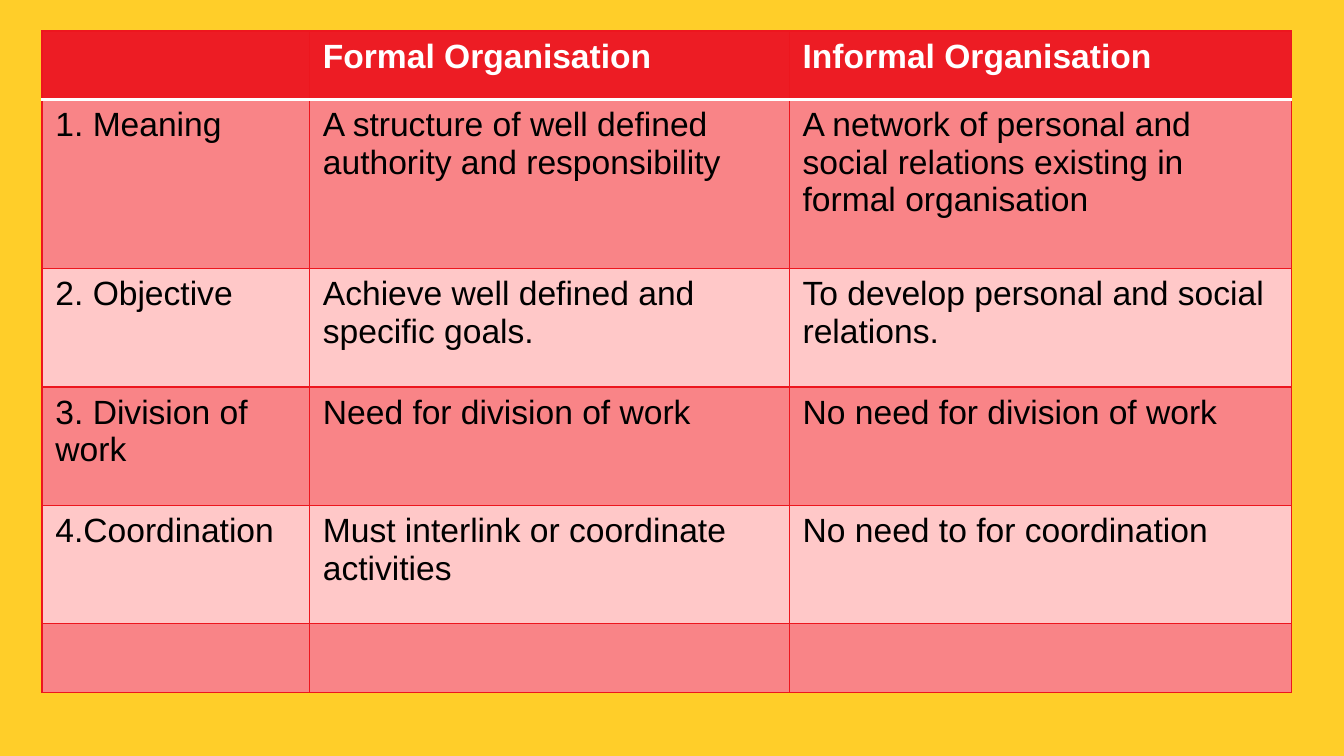
from dataclasses import dataclass

from lxml import etree
from pptx import Presentation
from pptx.dml.color import RGBColor
from pptx.oxml import ns
from pptx.util import Pt


@dataclass(frozen=True)
class Theme:
    back: str = "FFCE29"
    head: str = "ED1C24"
    dark: str = "F98487"
    light: str = "FFC8C8"
    rule: str = "ED161E"
    white: str = "FFFFFF"
    black: str = "000000"
    font: str = "Arial"
    size: float = 18
    thin: float = 0.75
    thick: float = 2


@dataclass(frozen=True)
class Row:
    high: float
    texts: tuple[str, str, str]


THEME = Theme()
WIDTHS = (143.3, 257, 269.3)
ROWS = (
    Row(36.7, ("", "Formal Organisation", "Informal Organisation")),
    Row(90.7, ("1. Meaning",
               "A structure of well defined authority and responsibility",
               "A network of personal and social relations existing in "
               "formal organisation")),
    Row(63.4, ("2. Objective", "Achieve well defined and specific goals.",
               "To develop personal and social relations.")),
    Row(63.4, ("3. Division of work", "Need for division of work",
               "No need for division of work")),
    Row(63.4, ("4.Coordination", "Must interlink or coordinate activities",
               "No need to for coordination")),
    Row(36.7, ("", "", "")),
)


def add_edge(cell, side: str, color: str, width: float) -> None:
    """Add one border; call before the fill, in the order L, R, T, B."""
    props = cell._tc.get_or_add_tcPr()
    line = etree.SubElement(props, ns.qn(f"a:ln{side}"), w=str(Pt(width)))
    fill = etree.SubElement(line, ns.qn("a:solidFill"))
    etree.SubElement(fill, ns.qn("a:srgbClr"), val=color)


def draw_cell(cell, words: str, index: int) -> None:
    head = index == 0
    # Borders: a thick white rule parts the header from the body
    for side in "LRTB":
        split = (head and side == "B") or (index == 1 and side == "T")
        add_edge(cell, side, THEME.white if split else THEME.rule,
                 THEME.thick if split else THEME.thin)
    # Banded fill
    band = THEME.dark if index % 2 else THEME.light
    cell.fill.solid()
    cell.fill.fore_color.rgb = RGBColor.from_string(
        THEME.head if head else band)
    # Text
    cell.text = words
    font = cell.text_frame.paragraphs[0].font
    font.name, font.size, font.bold = THEME.font, Pt(THEME.size), head
    font.color.rgb = RGBColor.from_string(
        THEME.white if head else THEME.black)


def draw_table(slide, left: float, top: float) -> None:
    wide, high = sum(WIDTHS), sum(row.high for row in ROWS)
    table = slide.shapes.add_table(
        len(ROWS), len(WIDTHS), Pt(left), Pt(top), Pt(wide), Pt(high)).table
    for col, width in zip(table.columns, WIDTHS):
        col.width = Pt(width)
    for index, row in enumerate(ROWS):
        table.rows[index].height = Pt(row.high)
        for place, words in enumerate(row.texts):
            draw_cell(table.cell(index, place), words, index)


def main() -> None:
    deck = Presentation()
    deck.slide_width, deck.slide_height = Pt(720), Pt(405)
    # Blank layout, since the slide has no title
    slide = deck.slides.add_slide(deck.slide_layouts[6])
    fill = slide.background.fill
    fill.solid()
    fill.fore_color.rgb = RGBColor.from_string(THEME.back)
    # Comparison table
    draw_table(slide, 22.5, 16.6)
    deck.save("out.pptx")


if __name__ == "__main__":
    main()
